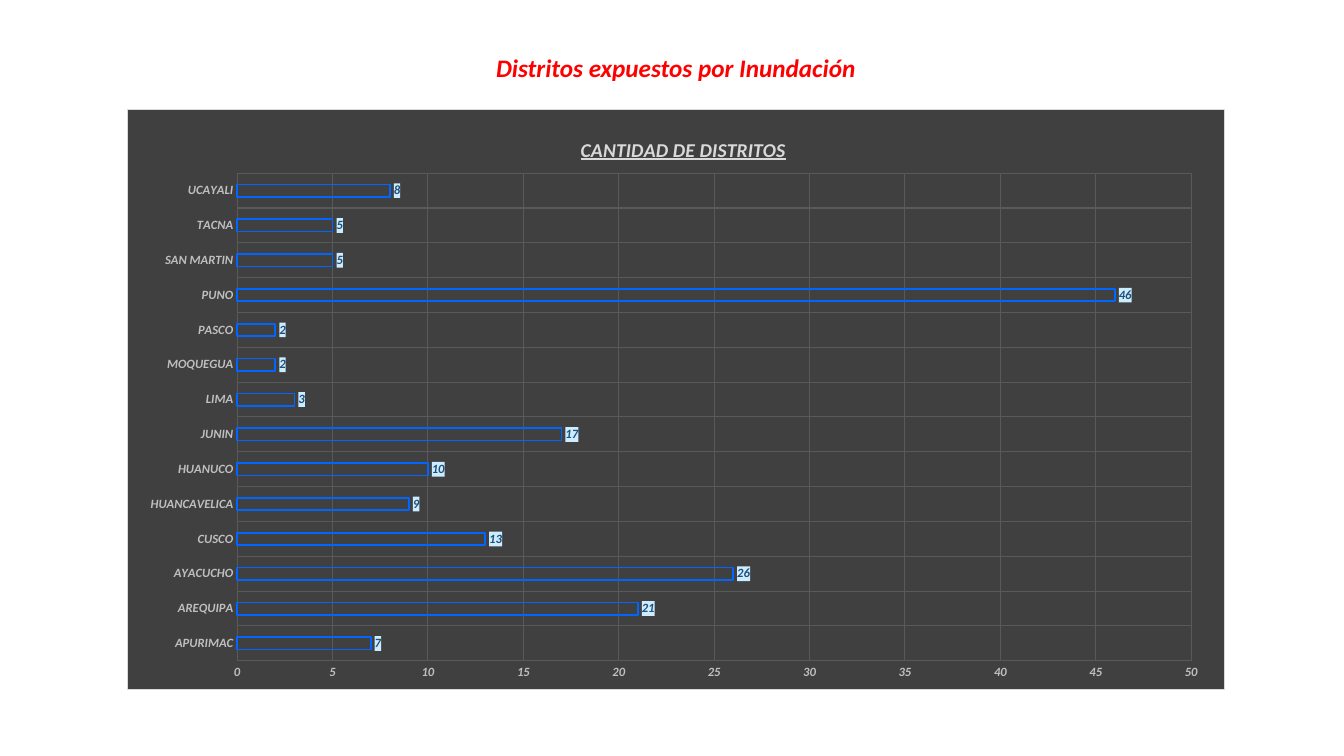
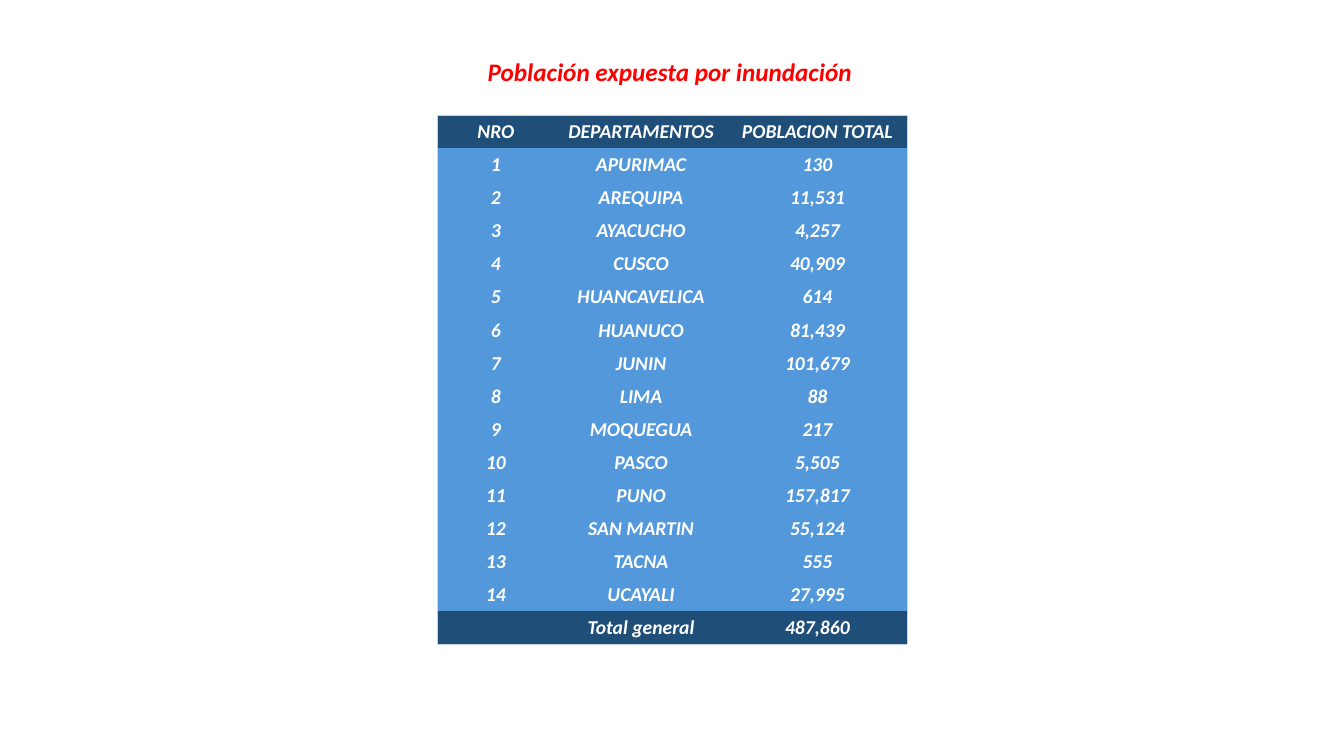
from lxml import etree
from pptx import Presentation, util as u
from pptx.chart.data import CategoryChartData
from pptx.dml.color import RGBColor
from pptx.enum import chart as charts, text
from pptx.oxml import parse_xml
from pptx.oxml.ns import nsdecls, qn

PX = 9144  # 100 px to the inch
FONT = "Calibri"
COLORS = {
    "title": "FF0000",
    "panel": "404040",
    "panel_border": "D9D9D9",
    "grid": "595959",
    "axis_text": "BFBFBF",
    "bar": "0066FF",
    "label_text": "1F4E79",
    "label_fill": "CCECFF",
    "band": "1F4E79",
    "body": "5398DA",
    "table_text": "FFFFFF",
    "table_border": "C4D5EB",
}
NO_TABLE_STYLE = "{2D5ABB26-0587-4C30-8999-92F81FD0307C}"

SLIDES = [
    ("Distritos expuestos por Inundación", (480, 47, 381, 40)),
    ("Población expuesta por inundación", (472, 51, 385, 40)),
]
# Department, exposed districts, exposed population
DEPARTMENTS = [
    ("APURIMAC", 7, 130),
    ("AREQUIPA", 21, 11531),
    ("AYACUCHO", 26, 4257),
    ("CUSCO", 13, 40909),
    ("HUANCAVELICA", 9, 614),
    ("HUANUCO", 10, 81439),
    ("JUNIN", 17, 101679),
    ("LIMA", 3, 88),
    ("MOQUEGUA", 2, 217),
    ("PASCO", 2, 5505),
    ("PUNO", 46, 157817),
    ("SAN MARTIN", 5, 55124),
    ("TACNA", 5, 555),
    ("UCAYALI", 8, 27995),
]


def style_font(font, size, color):
    """Apply the bold italic lettering used everywhere."""
    font.name, font.size = FONT, u.Pt(size)
    font.bold = font.italic = True
    font.color.rgb = RGBColor.from_string(COLORS[color])


def set_layout(parent, index, **fractions):
    """Place a chart part by fractions of the chart's size."""
    for layout in parent.findall(qn("c:layout")):
        parent.remove(layout)
    layout = etree.Element(qn("c:layout"))
    manual = etree.SubElement(layout, qn("c:manualLayout"))
    if "w" in fractions:
        etree.SubElement(manual, qn("c:layoutTarget")).set("val", "inner")
    for mode in ("xMode", "yMode"):
        etree.SubElement(manual, qn(f"c:{mode}")).set("val", "edge")
    for name, value in fractions.items():
        etree.SubElement(manual, qn(f"c:{name}")).set("val", str(value))
    parent.insert(index, layout)


presentation = Presentation()
presentation.slide_width, presentation.slide_height = 12192000, 750 * PX

slides = []
for heading, box in SLIDES:
    slide = presentation.slides.add_slide(presentation.slide_layouts[6])
    text_frame = slide.shapes.add_textbox(*(n * PX for n in box)).text_frame
    text_frame.word_wrap = False
    text_frame.auto_size = text.MSO_AUTO_SIZE.SHAPE_TO_FIT_TEXT
    text_frame.text = heading
    paragraph = text_frame.paragraphs[0]
    paragraph.alignment = text.PP_ALIGN.CENTER
    style_font(paragraph.runs[0].font, 18, "title")
    slides.append(slide)
chart_slide, table_slide = slides

# Districts chart
chart_data = CategoryChartData(number_format="#,##0")
chart_data.categories = [name for name, _, _ in DEPARTMENTS]
chart_data.add_series("CANTIDAD DE DISTRITOS", [count for _, count, _ in DEPARTMENTS])
chart = chart_slide.shapes.add_chart(
    charts.XL_CHART_TYPE.BAR_CLUSTERED,
    *(n * PX for n in (126, 108, 1089, 577)), chart_data).chart
chart.has_legend = False
chart.font.name, chart.font.size = FONT, u.Pt(10)

chart.has_title = True
chart_title = chart.chart_title
chart_title.text_frame.text = "CANTIDAD DE DISTRITOS"
title_font = chart_title.text_frame.paragraphs[0].runs[0].font
style_font(title_font, 14, "panel_border")
title_font.underline = True
set_layout(chart_title._element, 1, x=0.41, y=0.04)
set_layout(chart._chartSpace.chart.plotArea, 0, x=0.1, y=0.11, w=0.87, h=0.84)

for axis in (chart.category_axis, chart.value_axis):
    axis.major_tick_mark = axis.minor_tick_mark = charts.XL_TICK_MARK.NONE
    axis.format.line.fill.background()
    axis.has_major_gridlines = True
    grid_line = axis.major_gridlines.format.line
    grid_line.color.rgb = RGBColor.from_string(COLORS["grid"])
    grid_line.width = u.Pt(0.75)
    style_font(axis.tick_labels.font, 9, "axis_text")
chart.value_axis.minimum_scale = 0
chart.value_axis.maximum_scale = 50
chart.value_axis.major_unit = 5

plot = chart.plots[0]
plot.vary_by_categories = False
plot.gap_width, plot.overlap = 182, -50
bars = plot.series[0].format
bars.fill.background()
bars.line.color.rgb = RGBColor.from_string(COLORS["bar"])
bars.line.width = u.Pt(1.25)

plot.has_data_labels = True
labels = plot.data_labels
labels.show_value = True
labels.position = charts.XL_LABEL_POSITION.OUTSIDE_END
labels.number_format, labels.number_format_is_linked = "#,##0", False
style_font(labels.font, 9, "label_text")

for parent, fill, border in (
    (chart._chartSpace, "panel", "panel_border"),
    (labels._element, "label_fill", None),
):
    outline = f'<a:solidFill><a:srgbClr val="{COLORS[border]}"/></a:solidFill>' if border else "<a:noFill/>"
    parent.find(qn("c:txPr")).addprevious(parse_xml(
        f'<c:spPr {nsdecls("c", "a")}>'
        f'<a:solidFill><a:srgbClr val="{COLORS[fill]}"/></a:solidFill>'
        f'<a:ln w="{u.Pt(0.75)}">{outline}</a:ln></c:spPr>'))

# Population table
rows = [("NRO", "DEPARTAMENTOS", "POBLACION TOTAL")]
for number, (name, _, population) in enumerate(DEPARTMENTS, 1):
    rows.append((str(number), name, f"{population:,}"))
total = sum(population for _, _, population in DEPARTMENTS)
rows.append(("", "Total general", f"{total:,}"))

widths = (116, 172, 178)
last_row, last_column = len(rows) - 1, len(widths) - 1
table = table_slide.shapes.add_table(
    len(rows), len(widths), 434 * PX, 114 * PX, sum(widths) * PX, 525 * PX).table
table._tbl.tblPr.find(qn("a:tableStyleId")).text = NO_TABLE_STYLE
table.horz_banding = False
for column, width in zip(table.columns, widths):
    column.width = width * PX
for row in table.rows:
    row.height = 525 * PX // len(rows)

for r, values in enumerate(rows):
    for c, value in enumerate(values):
        cell = table.cell(r, c)
        cell.margin_left = cell.margin_top = cell.margin_right = PX
        cell.margin_bottom = 0
        cell.vertical_anchor = text.MSO_ANCHOR.MIDDLE
        cell.fill.solid()
        color = "band" if r in (0, last_row) else "body"
        cell.fill.fore_color.rgb = RGBColor.from_string(COLORS[color])
        cell.text_frame.text = value
        paragraph = cell.text_frame.paragraphs[0]
        paragraph.alignment = text.PP_ALIGN.CENTER
        style_font(paragraph.font, 14, "table_text")
        for run in paragraph.runs:
            style_font(run.font, 14, "table_text")

        outer_edges = {"lnL": c == 0, "lnR": c == last_column,
                       "lnT": r == 0, "lnB": r == last_row}
        edges = [edge for edge, is_outer in outer_edges.items() if is_outer]
        for index, edge in enumerate(edges):
            cell._tc.tcPr.insert(index, parse_xml(
                f'<a:{edge} {nsdecls("a")} w="{u.Pt(0.5)}"><a:solidFill>'
                f'<a:srgbClr val="{COLORS["table_border"]}"/></a:solidFill></a:{edge}>'))

presentation.save("out.pptx")
